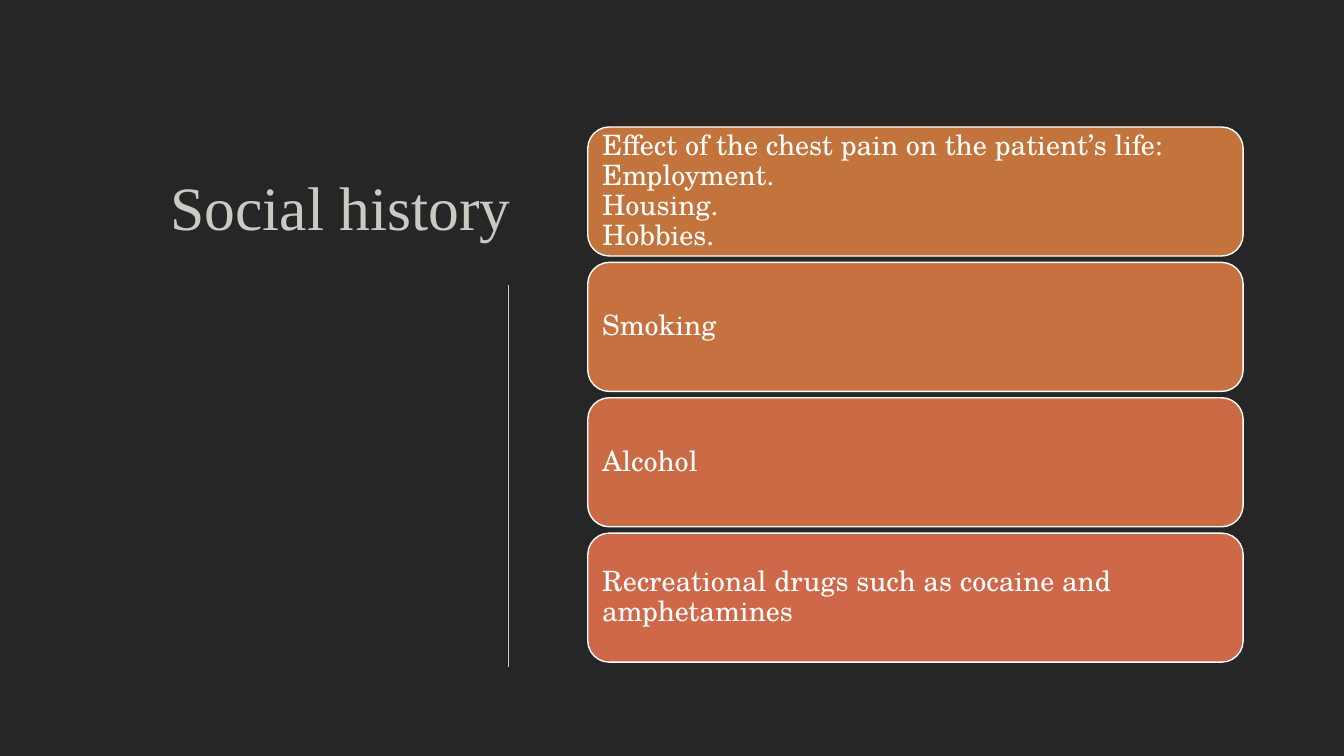
"""Build the social history slide with its four topic cards."""
from pptx import Presentation
from pptx.dml.color import RGBColor
from pptx.enum import shapes, text
from pptx.oxml.ns import qn
from pptx.util import Inches, Pt
from lxml import etree

TITLE = "Social history"
TOPICS = [
    ("Effect of the chest pain on the patient’s life:\nEmployment.\nHousing.\nHobbies.", "C3743C"),
    ("Smoking", "C77040"),
    ("Alcohol", "CB6B45"),
    ("Recreational drugs such as cocaine and amphetamines", "CF6749"),
]
COLORS = {"background": "262626", "title": "CCC9C2", "card_text": "FFFFFF"}
CARD_LEFT, CARD_TOP, CARD_WIDTH, CARD_HEIGHT = 5.83, 1.26, 6.5, 1.28
CARD_STEP = 1.343
CARD_INSET = 0.08


def color(name):
    return RGBColor.from_string(COLORS.get(name, name))


def write(paragraph, words, size, font, tint):
    paragraph.text = words
    for span in paragraph.runs:
        span.font.size = Pt(size)
        span.font.name = font
        span.font.color.rgb = color(tint)


def add_title(page):
    box = page.shapes.add_textbox(Inches(0.86), Inches(0.88), Inches(4.31), Inches(1.58))
    frame = box.text_frame
    frame.word_wrap = True
    frame.vertical_anchor = text.MSO_ANCHOR.BOTTOM
    para = frame.paragraphs[0]
    para.alignment = text.PP_ALIGN.RIGHT
    write(para, TITLE, 44, "Times New Roman", "title")


def add_divider(page):
    divider = page.shapes.add_connector(
        shapes.MSO_CONNECTOR.STRAIGHT, Inches(5.04), Inches(2.83), Inches(5.04), Inches(6.62))
    divider.line.color.rgb = color("title")
    divider.line.width = Pt(0.85)
    etree.SubElement(divider._element.spPr, qn("a:effectLst"))


def add_card(page, index, words, fill):
    card = page.shapes.add_shape(
        shapes.MSO_SHAPE.ROUNDED_RECTANGLE, Inches(CARD_LEFT),
        Inches(CARD_TOP + index * CARD_STEP), Inches(CARD_WIDTH), Inches(CARD_HEIGHT))
    card.shadow.inherit = False
    card.fill.solid()
    card.fill.fore_color.rgb = color(fill)
    card.line.color.rgb = color("card_text")
    card.line.width = Pt(1)
    frame = card.text_frame
    frame.word_wrap = True
    frame.vertical_anchor = text.MSO_ANCHOR.MIDDLE
    frame.margin_left = frame.margin_right = Inches(CARD_INSET)
    frame.margin_top = frame.margin_bottom = Inches(CARD_INSET)
    para = frame.paragraphs[0]
    para.alignment = text.PP_ALIGN.LEFT
    para.line_spacing = 0.9
    write(para, words, 20, "TeX Gyre Schola", "card_text")


def main():
    deck = Presentation()
    deck.slide_width, deck.slide_height = Inches(13.33), Inches(7.5)
    page = deck.slides.add_slide(deck.slide_layouts[6])
    page.background.fill.solid()
    page.background.fill.fore_color.rgb = color("background")
    add_title(page)
    add_divider(page)
    for index, (words, fill) in enumerate(TOPICS):
        add_card(page, index, words, fill)
    deck.save("out.pptx")


if __name__ == "__main__":
    main()
